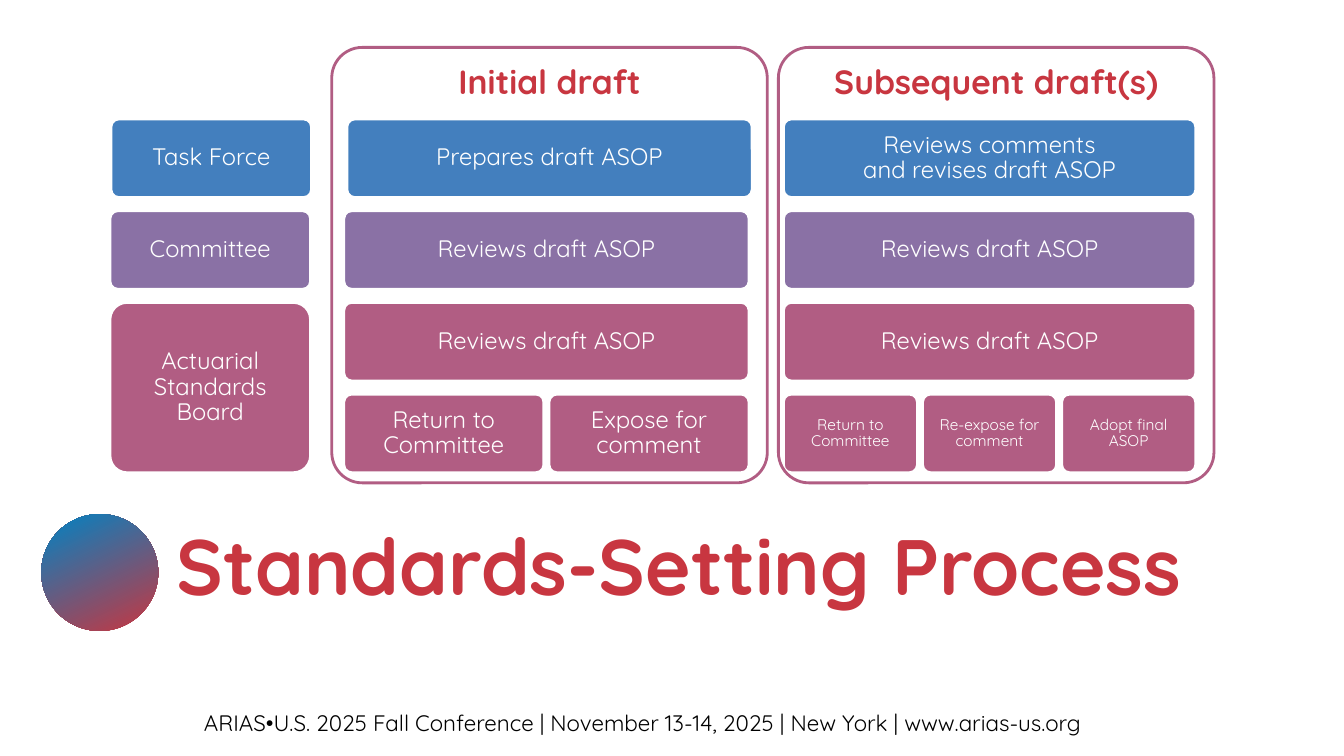
import dataclasses

import pptx
import pptx.dml.color
import pptx.enum.shapes
import pptx.enum.text
import pptx.util

Inches = pptx.util.Inches
Pt = pptx.util.Pt
SHAPE = pptx.enum.shapes.MSO_SHAPE
ALIGN = pptx.enum.text.PP_ALIGN
ANCHOR = pptx.enum.text.MSO_ANCHOR

FONT = "Quicksand"
COLORS = {
    "task_force": "437FBE",
    "committee": "8A71A5",
    "board": "B15D83",
    "red": "C83640",
    "blue": "0083C4",
    "white": "FFFFFF",
    "black": "000000",
}
ROW_TOP, ROW_PITCH, ROW_HEIGHT = 1.18, 0.91, 0.78
CELL_GAP = 0.05


@dataclasses.dataclass
class Row:
    index: int
    color: str
    labels: list[str]
    size: int = 17
    span: int = 1
    shift: float = 0


@dataclasses.dataclass
class Column:
    left: float
    width: float
    rows: list[Row]


@dataclasses.dataclass
class Frame:
    left: float
    heading: str


COLUMNS = [
    Column(1.09, 1.99, [
        Row(0, "task_force", ["Task Force"], shift=0.01),
        Row(1, "committee", ["Committee"]),
        Row(2, "board", ["Actuarial Standards Board"], span=2),
    ]),
    Column(3.41, 4.02, [
        Row(0, "task_force", ["Prepares draft ASOP"], shift=0.03),
        Row(1, "committee", ["Reviews draft ASOP"]),
        Row(2, "board", ["Reviews draft ASOP"]),
        Row(3, "board", ["Return to Committee", "Expose for comment"]),
    ]),
    Column(7.77, 4.09, [
        Row(0, "task_force", ["Reviews comments\nand revises draft ASOP"]),
        Row(1, "committee", ["Reviews draft ASOP"]),
        Row(2, "board", ["Reviews draft ASOP"]),
        Row(3, "board", ["Return to Committee", "Re-expose for comment",
                         "Adopt final ASOP"], size=11),
    ]),
]
FRAMES = [Frame(3.29, "Initial draft"), Frame(7.72, "Subsequent draft(s)")]


def rgb(name: str) -> pptx.dml.color.RGBColor:
    return pptx.dml.color.RGBColor.from_string(COLORS[name])


def write(sp, text: str, size: int, color: str, bold: bool = False,
          align=ALIGN.CENTER, anchor=ANCHOR.MIDDLE, inset: float = 0.05,
          spacing: float = 1.0) -> None:
    tf = sp.text_frame
    tf.word_wrap = True
    tf.auto_size = pptx.enum.text.MSO_AUTO_SIZE.NONE
    tf.vertical_anchor = anchor
    tf.margin_left = tf.margin_right = Inches(inset)
    tf.margin_top = tf.margin_bottom = Inches(inset)
    p = tf.paragraphs[0]
    p.alignment = align
    p.line_spacing = spacing
    for i, line in enumerate(text.split("\n")):
        if i:
            p.add_line_break()
        r = p.add_run()
        r.text = line
        r.font.name = FONT
        r.font.size = Pt(size)
        r.font.bold = bold
        r.font.color.rgb = rgb(color)


def add_rounded(s, left: float, top: float, width: float, height: float,
                radius: float, line: str):
    sp = s.shapes.add_shape(SHAPE.ROUNDED_RECTANGLE, Inches(left), Inches(top),
                            Inches(width), Inches(height))
    sp.shadow.inherit = False
    sp.adjustments[0] = radius
    sp.line.color.rgb = rgb(line)
    sp.line.width = Pt(2)
    return sp


def add_row(s, column: Column, row: Row) -> None:
    count = len(row.labels)
    width = (column.width - CELL_GAP * (count - 1)) / count
    height = ROW_HEIGHT + ROW_PITCH * (row.span - 1)
    top = ROW_TOP + ROW_PITCH * row.index
    for i, label in enumerate(row.labels):
        left = column.left + row.shift + i * (width + CELL_GAP)
        sp = add_rounded(s, left, top, width, height, 0.1, "white")
        sp.fill.solid()
        sp.fill.fore_color.rgb = rgb(row.color)
        write(sp, label, row.size, "white", inset=0.07, spacing=0.9)


def add_frame(s, frame: Frame) -> None:
    sp = add_rounded(s, frame.left, 0.47, 4.32, 4.32, 0.07, "board")
    sp.fill.background()
    write(sp, frame.heading, 24, "red", bold=True, anchor=ANCHOR.TOP)


def add_footer(s) -> None:
    sp = s.shapes.add_textbox(Inches(0.61), Inches(6.98), Inches(11.53), Inches(0.38))
    write(sp, "ARIAS•U.S. 2025 Fall Conference | November 13-14, 2025 | "
              "New York | www.arias-us.org", 16, "black")


def add_circle(s) -> None:
    sp = s.shapes.add_shape(SHAPE.OVAL, Inches(0.41), Inches(5.1),
                            Inches(1.16), Inches(1.16))
    sp.shadow.inherit = False
    sp.line.fill.background()
    sp.fill.gradient()
    sp.fill.gradient_angle = 116
    for stop, color in zip(sp.fill.gradient_stops, ("red", "blue")):
        stop.color.rgb = rgb(color)


def add_title(s) -> None:
    sp = s.shapes.title
    sp.left, sp.top = Inches(1.69), Inches(4.15)
    sp.width, sp.height = Inches(11.39), Inches(1.99)
    write(sp, "Standards-Setting Process", 56, "red", bold=True,
          align=ALIGN.LEFT, anchor=ANCHOR.BOTTOM, inset=0.06, spacing=0.9)


def main() -> None:
    prs = pptx.Presentation()
    prs.slide_width, prs.slide_height = Inches(13.33), Inches(7.5)
    s = prs.slides.add_slide(prs.slide_layouts[5])
    add_footer(s)
    add_circle(s)
    add_title(s)
    for column in COLUMNS:
        for row in column.rows:
            add_row(s, column, row)
    for frame in FRAMES:
        add_frame(s, frame)
    prs.save("out.pptx")


if __name__ == "__main__":
    main()
